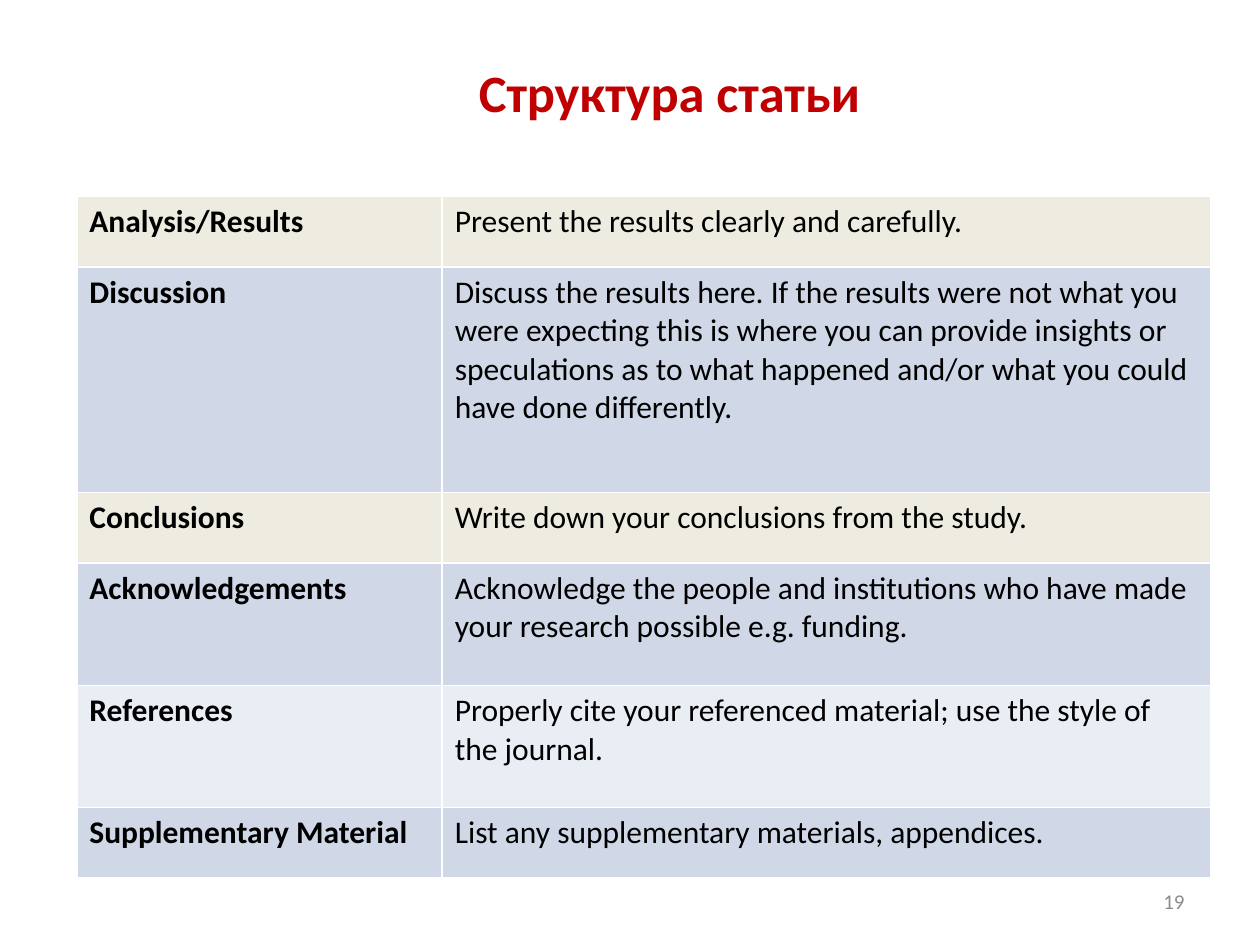
from dataclasses import dataclass

import pptx
import pptx.dml.color
import pptx.enum.text
import pptx.util
from pptx.dml.color import RGBColor
from pptx.util import Inches

BLACK = RGBColor(0x00, 0x00, 0x00)
RED = RGBColor(0xC0, 0x00, 0x00)
GRAY = RGBColor(0x8C, 0x8C, 0x8C)
BEIGE = RGBColor(0xEE, 0xEC, 0xE1)
BLUE = RGBColor(0xD0, 0xD8, 0xE8)
PALE_BLUE = RGBColor(0xE9, 0xED, 0xF4)

COLUMN_WIDTHS = (2.9, 6.1)


@dataclass(frozen=True)
class Section:
    name: str
    advice: str
    height: float
    fill: RGBColor


SECTIONS = (
    Section("Analysis/Results", "Present the results clearly and carefully.", 0.56, BEIGE),
    Section(
        "Discussion",
        "Discuss the results here. If the results were not what you were expecting "
        "this is where you can provide insights or speculations as to what happened "
        "and/or what you could have done differently.",
        1.79,
        BLUE,
    ),
    Section("Conclusions", "Write down your conclusions from the study.", 0.56, BEIGE),
    Section(
        "Acknowledgements",
        "Acknowledge the people and institutions who have made your research "
        "possible e.g. funding.",
        0.97,
        BLUE,
    ),
    Section(
        "References",
        "Properly cite your referenced material; use the style of the journal.",
        0.97,
        PALE_BLUE,
    ),
    Section("Supplementary Material", "List any supplementary materials, appendices.", 0.56, BLUE),
)


def write(
    frame: pptx.text.text.TextFrame,
    text: str,
    size: float,
    color: RGBColor,
    bold: bool = False,
    align: pptx.enum.text.PP_ALIGN = pptx.enum.text.PP_ALIGN.LEFT,
) -> None:
    frame.text = text
    frame.word_wrap = True
    paragraph = frame.paragraphs[0]
    paragraph.alignment = align
    paragraph.font.name = "Calibri"
    paragraph.font.size = pptx.util.Pt(size)
    paragraph.font.bold = bold
    paragraph.font.color.rgb = color


def add_sections(slide: pptx.slide.Slide, sections: tuple[Section, ...]) -> None:
    table = slide.shapes.add_table(
        len(sections),
        len(COLUMN_WIDTHS),
        Inches(0.61),
        Inches(1.56),
        Inches(sum(COLUMN_WIDTHS)),
        Inches(sum(section.height for section in sections)),
    ).table
    for column, width in zip(table.columns, COLUMN_WIDTHS):
        column.width = Inches(width)
    for row, section in zip(table.rows, sections):
        row.height = Inches(section.height)
        for cell, text, bold in zip(row.cells, (section.name, section.advice), (True, False)):
            cell.fill.solid()
            cell.fill.fore_color.rgb = section.fill
            write(cell.text_frame, text, 18, BLACK, bold)


def main() -> None:
    presentation = pptx.Presentation()
    presentation.slide_width = Inches(10)
    presentation.slide_height = Inches(7.5)
    slide = presentation.slides.add_slide(presentation.slide_layouts.get_by_name("Title Only"))

    add_sections(slide, SECTIONS)

    title = slide.shapes.title
    title.left, title.top = Inches(1.93), Inches(0.3)
    title.width, title.height = Inches(6.77), Inches(0.85)
    title.text_frame.vertical_anchor = pptx.enum.text.MSO_ANCHOR.MIDDLE
    write(title.text_frame, "Структура статьи", 30, RED, True, pptx.enum.text.PP_ALIGN.CENTER)

    page_number = slide.shapes.add_textbox(Inches(7.17), Inches(6.95), Inches(2.33), Inches(0.4))
    page_number.text_frame.vertical_anchor = pptx.enum.text.MSO_ANCHOR.MIDDLE
    write(page_number.text_frame, "19", 12, GRAY, align=pptx.enum.text.PP_ALIGN.RIGHT)

    presentation.save("out.pptx")


if __name__ == "__main__":
    main()
